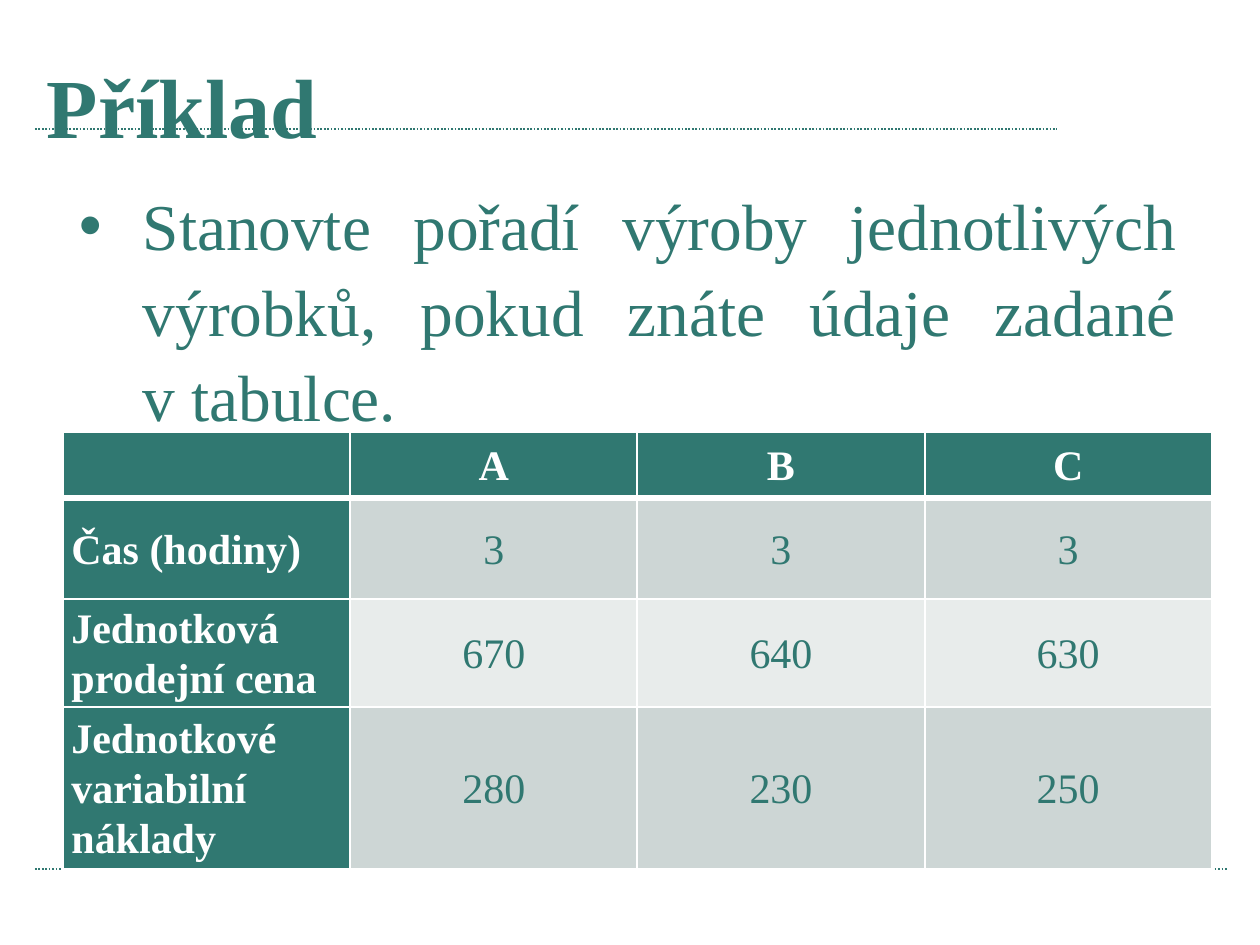
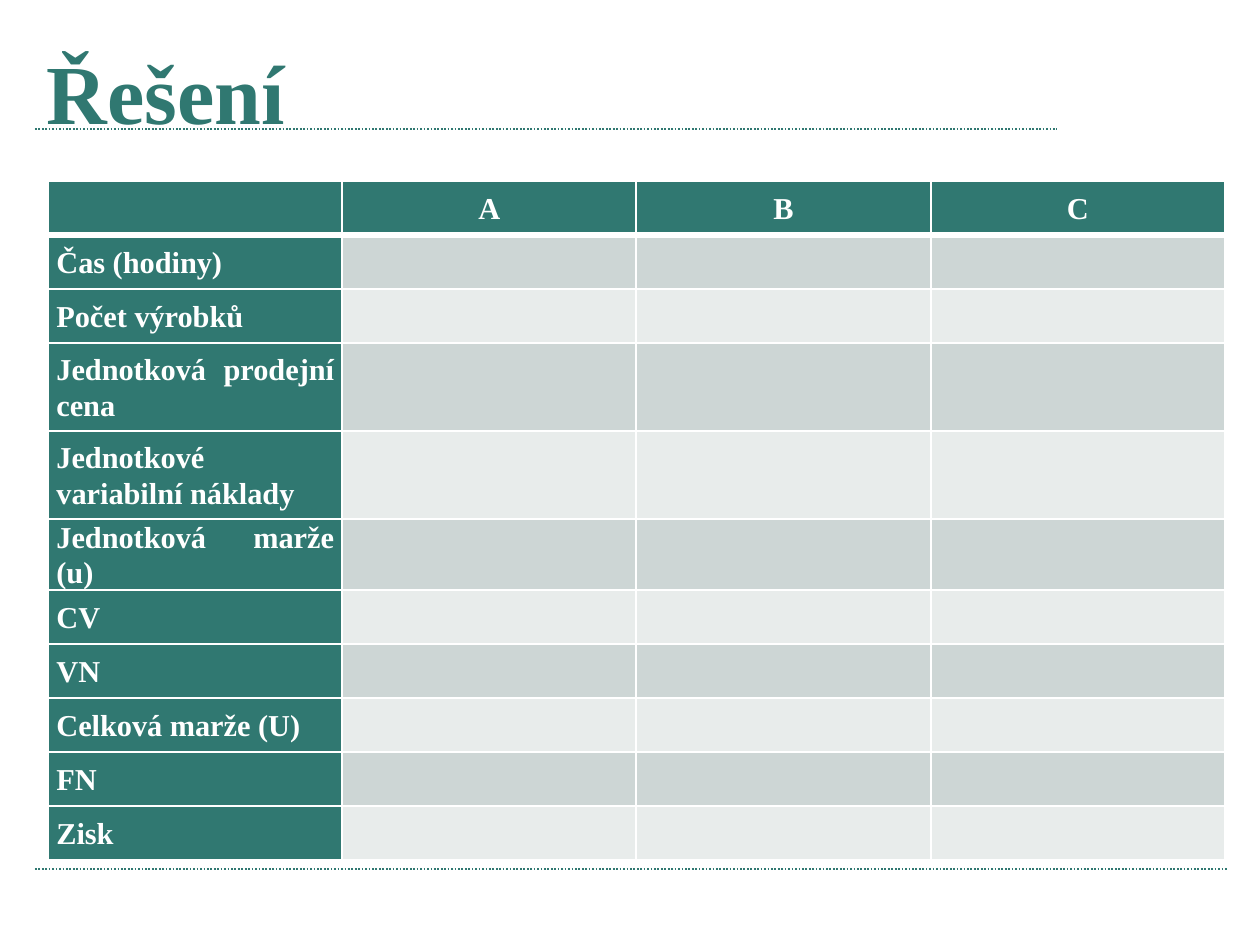
from dataclasses import dataclass

from lxml import etree
from pptx import Presentation, util as u
from pptx.dml.color import RGBColor
from pptx.enum import dml, shapes, text
from pptx.oxml import ns

PX = 914400 / 168


@dataclass(frozen=True)
class Theme:
    teal: RGBColor = RGBColor.from_string("307871")
    white: RGBColor = RGBColor.from_string("FFFFFF")
    bands: tuple = (RGBColor.from_string("CDD6D5"), RGBColor.from_string("E8ECEB"))
    font: str = "Times New Roman"
    title: int = 36
    body: int = 28
    example_table: int = 18
    solution_table: int = 13
    text_spacing: float = 1.09
    table_spacing: float = 1.07


THEME = Theme()


def px(*lengths):
    return [u.Emu(round(length * PX)) for length in lengths]


def style_paragraph(paragraph, size, color, align, spacing, bold=False):
    paragraph.alignment = align
    paragraph.line_spacing = spacing
    paragraph.space_before = u.Pt(0)
    for run in paragraph.runs:
        run.font.name = THEME.font
        run.font.size = u.Pt(size)
        run.font.bold = bold
        run.font.color.rgb = color


def fill_placeholder(placeholder, box, words):
    """Move a placeholder to a px box, set its words and return the paragraph."""
    placeholder.left, placeholder.top, placeholder.width, placeholder.height = px(*box)
    frame = placeholder.text_frame
    frame.text = words
    frame.word_wrap = True
    frame.auto_size = text.MSO_AUTO_SIZE.NONE
    frame.vertical_anchor = text.MSO_ANCHOR.TOP
    return frame.paragraphs[0]


def add_title(slide, top, words):
    paragraph = fill_placeholder(slide.shapes.title, (30, top, 1110, 99), words)
    style_paragraph(paragraph, THEME.title, THEME.teal, text.PP_ALIGN.LEFT,
                    THEME.text_spacing, bold=True)


def add_task(slide, box, words):
    paragraph = fill_placeholder(slide.placeholders[1], box, words)
    hang = px(64)[0]
    properties = paragraph._p.get_or_add_pPr()
    properties.set("marL", str(hang))
    properties.set("indent", str(-hang))
    style_paragraph(paragraph, THEME.body, THEME.teal, text.PP_ALIGN.JUSTIFY,
                    THEME.text_spacing)


def add_master_rules(master, slide):
    """Draw the two dotted rules on a slide and move them to its master."""
    for number, (right, y) in enumerate([(1057, 129), (1228, 869)]):
        rule = slide.shapes.add_connector(
            shapes.MSO_CONNECTOR.STRAIGHT, *px(35, y, right, y))
        rule.line.color.rgb = THEME.teal
        rule.line.width = u.Pt(0.75)
        rule.line.dash_style = dml.MSO_LINE.ROUND_DOT
        etree.SubElement(rule.element.spPr, ns.qn("a:effectLst"))
        rule.element.nvCxnSpPr.cNvPr.set("id", str(100 + number))
        master.element.cSld.spTree.append(rule.element)


def set_borders(cell, row):
    """Give white 1 pt borders, with 3 pt below the header row."""
    widths = {"L": 1, "R": 1, "T": 3 if row == 1 else 1, "B": 3 if row == 0 else 1}
    properties = cell._tc.get_or_add_tcPr()
    for position, (side, width) in enumerate(widths.items()):
        line = etree.Element(ns.qn(f"a:ln{side}"), w=str(u.Pt(width)))
        fill = etree.SubElement(line, ns.qn("a:solidFill"))
        etree.SubElement(fill, ns.qn("a:srgbClr"), val=str(THEME.white))
        properties.insert(position, line)


def add_product_table(slide, left, top, width, size, heights, rows):
    """Place a table with a header row and a header column."""
    columns = len(rows[0])
    table = slide.shapes.add_table(
        len(rows), columns, *px(left, top, width, sum(heights))).table
    for column in table.columns:
        column.width = px(width / columns)[0]
    for r, (height, values) in enumerate(zip(heights, rows)):
        table.rows[r].height = px(height)[0]
        for c, value in enumerate(values):
            cell = table.cell(r, c)
            heading = r == 0 or c == 0
            cell.fill.solid()
            cell.fill.fore_color.rgb = THEME.teal if heading else THEME.bands[(r - 1) % 2]
            set_borders(cell, r)
            cell.margin_left = cell.margin_right = u.Inches(0.05)
            cell.margin_top = cell.margin_bottom = 0
            cell.vertical_anchor = text.MSO_ANCHOR.MIDDLE
            if value:
                cell.text_frame.text = value
                style_paragraph(
                    cell.text_frame.paragraphs[0], size,
                    THEME.white if heading else THEME.teal,
                    text.PP_ALIGN.CENTER if c else text.PP_ALIGN.JUSTIFY,
                    THEME.table_spacing, bold=heading)


def build_example(slide, header):
    add_title(slide, 37, "Příklad")
    add_task(slide, (62, 170, 1131, 370),
             "Stanovte pořadí výroby jednotlivých výrobků, "
             "pokud znáte údaje zadané v\u00a0tabulce.")
    add_product_table(slide, 63, 432, 1149, THEME.example_table, [66, 101, 108, 162], [
        header,
        ["Čas (hodiny)", "3", "3", "3"],
        ["Jednotková prodejní cena", "670", "640", "630"],
        ["Jednotkové variabilní náklady", "280", "230", "250"],
    ])


def build_solution(slide, header):
    add_title(slide, 23, "Řešení")
    labels = ["Čas (hodiny)", "Počet výrobků", "Jednotková prodejní cena",
              "Jednotkové variabilní náklady", "Jednotková marže (u)", "CV", "VN",
              "Celková marže (U)", "FN", "Zisk"]
    add_product_table(slide, 48, 181, 1177, THEME.solution_table,
                      [54] * 3 + [88] * 2 + [71] + [54] * 5,
                      [header] + [[label, "", "", ""] for label in labels])


def main():
    deck = Presentation()
    deck.slide_width, deck.slide_height = px(1260, 945)
    header = ["", "A", "B", "C"]
    example = deck.slides.add_slide(deck.slide_layouts[1])
    add_master_rules(deck.slide_master, example)
    build_example(example, header)
    build_solution(deck.slides.add_slide(deck.slide_layouts[5]), header)
    deck.save("out.pptx")


if __name__ == "__main__":
    main()
